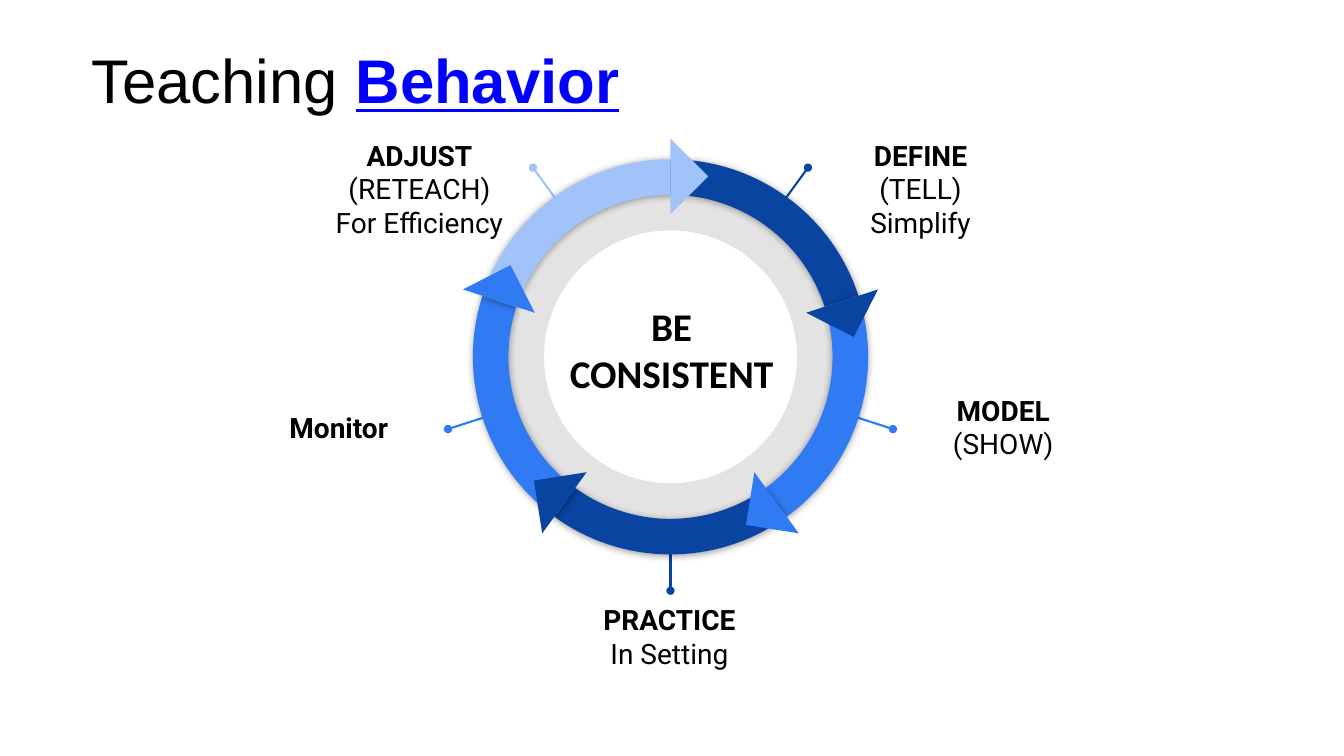
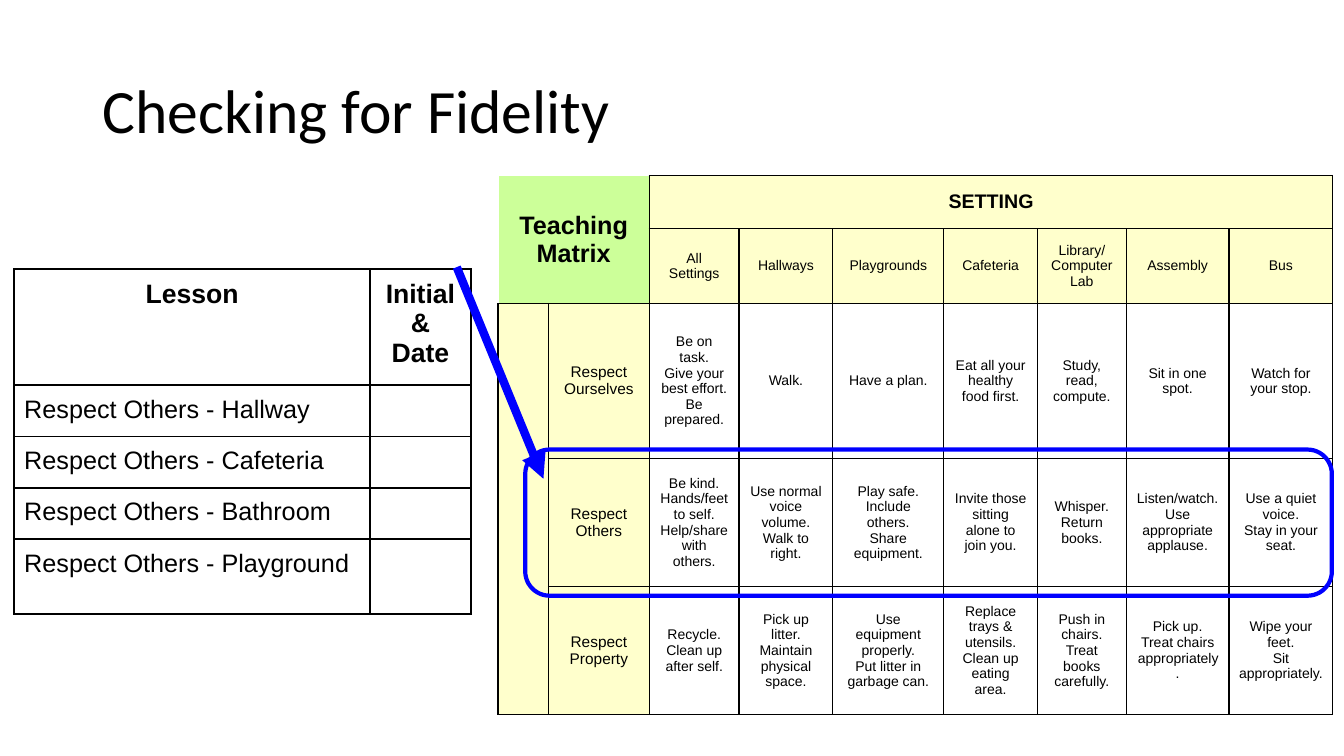
from math import cos, radians, sin

from lxml import etree
from pptx import Presentation
from pptx import util as u
from pptx.dml.color import RGBColor
from pptx.enum import shapes, text
from pptx.oxml import ns

IN, PT = u.Inches, u.Pt
BLACK = RGBColor(0, 0, 0)
WHITE = RGBColor(255, 255, 255)
NAVY = RGBColor(0x09, 0x44, 0xA1)
AZURE = RGBColor(0x30, 0x7B, 0xF3)
SKY = RGBColor(0xA1, 0xC3, 0xFA)
BLUE = RGBColor(0, 0, 255)
LIME = RGBColor(0xCC, 0xFF, 0x99)
CREAM = RGBColor(0xFF, 0xFF, 0xCC)

MID = text.MSO_ANCHOR.MIDDLE
TOP = text.MSO_ANCHOR.TOP
CENTER = text.PP_ALIGN.CENTER
LEFT = text.PP_ALIGN.LEFT
KIND = shapes.MSO_SHAPE
STEP = 72  # degrees from one stage of the ring to the next

# Ring stages, clockwise from the top: colour, label spot, label lines
STAGES = [
    (NAVY, (8.04, 1.24), ["DEFINE", "(TELL)", "Simplify"]),
    (AZURE, (8.86, 3.77), ["MODEL", "(SHOW)"]),
    (NAVY, (5.55, 5.85), ["PRACTICE", "In Setting"]),
    (AZURE, (2.27, 3.94), ["Monitor"]),
    (SKY, (3.07, 1.24), ["ADJUST", "(RETEACH)", "For Efficiency"]),
]

PLACES = ["Hallway", "Cafeteria", "Bathroom", "Playground"]

SETTINGS = ["All Settings", "Hallways", "Playgrounds", "Cafeteria",
            "Library/\nComputer Lab", "Assembly", "Bus"]
RULES = {
    "Respect Ourselves": [
        "Be on task.\nGive your best effort.\nBe prepared.", "Walk.",
        "Have a plan.", "Eat all your healthy food first.",
        "Study, read, compute.", "Sit in one spot.", "Watch for your stop."],
    "Respect Others": [
        "Be kind.\nHands/feet to self.\nHelp/share with others.",
        "Use normal voice volume.\nWalk to right.",
        "Play safe.\nInclude others.\nShare equipment.",
        "Invite those sitting alone to join you.", "Whisper.\nReturn books.",
        "Listen/watch.\nUse appropriate applause.",
        "Use a quiet voice.\nStay in your seat."],
    "Respect Property": [
        "Recycle.\nClean up after self.",
        "Pick up litter.\nMaintain physical space.",
        "Use equipment properly.\nPut litter in garbage can.",
        "Replace trays & utensils.\nClean up eating area.",
        "Push in chairs.\nTreat books carefully.",
        "Pick up.\nTreat chairs appropriately.",
        "Wipe your feet.\nSit appropriately."],
}


# Shared helpers
def style(item, **form):
    for key, val in form.items():
        setattr(item, key, val)


def node(root, tag, **atts):
    return etree.SubElement(root, ns.qn("a:" + tag), atts)


def write(frame, lines, align=LEFT, space=None, **font):
    """Fill a frame; each line is a list of (words, format) runs."""
    for i, runs in enumerate(lines):
        para = frame.paragraphs[0] if i == 0 else frame.add_paragraph()
        style(para, alignment=align, line_spacing=space)
        for words, form in runs:
            run = para.add_run()
            run.text = words
            form = {"color": BLACK, **font, **form}
            run.font.color.rgb = form.pop("color")
            style(run.font, **form)


def label(slide, box, lines, pad=(0.13, 0.13), anchor=TOP, **form):
    frame = slide.shapes.add_textbox(*map(IN, box)).text_frame
    style(frame, word_wrap=True, vertical_anchor=anchor,
          margin_left=IN(pad[0]), margin_right=IN(pad[0]),
          margin_top=IN(pad[1]), margin_bottom=IN(pad[1]))
    write(frame, lines, **form)


def title(slide, box, runs, face):
    label(slide, box, [runs], pad=(0.1, 0.05), anchor=MID,
          space=0.9, size=PT(44), name=face)


def solid(slide, kind, box, color):
    shape = slide.shapes.add_shape(kind, *map(IN, box))
    shape.shadow.inherit = False
    shape.fill.solid()
    shape.fill.fore_color.rgb = color
    shape.line.fill.background()
    return shape


def line(slide, start, end, color, width, mark, kind):
    link = slide.shapes.add_connector(
        shapes.MSO_CONNECTOR.STRAIGHT, *map(IN, (*start, *end)))
    link.line.color.rgb = color
    link.line.width = PT(width)
    node(link.line._get_or_add_ln(), mark, type=kind)
    node(link._element.spPr, "effectLst")


def polar(hub, reach, turn):
    """Point at a clockwise turn from twelve o'clock."""
    a = radians(turn)
    return hub[0] + reach * sin(a), hub[1] - reach * cos(a)


def around(spot, size):
    return spot[0] - size / 2, spot[1] - size / 2, size, size


# Ring of five arrows
def track(slide, hub):
    shape = solid(slide, KIND.DONUT, around(hub, 3.7), BLACK)
    shape.adjustments[0] = 0.161
    tint = shape._element.spPr.find(".//" + ns.qn("a:srgbClr"))
    node(tint, "alpha", val="11000")


def arc(slide, hub, turn, color):
    shape = solid(slide, KIND.BLOCK_ARC, around(hub, 3.92), color)
    # Angles are in 60000ths of a degree, adjustments in 100000ths
    ends = [(270 + turn + more) % 360 * 0.6 for more in (0, STEP)]
    for i, val in enumerate([*ends, 0.09]):
        shape.adjustments[i] = val
    cast = node(shape._element.spPr.find(ns.qn("a:effectLst")), "outerShdw",
                blurRad=str(PT(5.6)), dist=str(PT(0.8)), dir="5400000",
                algn="ctr", rotWithShape="0")
    node(node(cast, "srgbClr", val="000000"), "alpha", val="40000")


def head(slide, hub, turn, color):
    box = around(polar(hub, 1.79, turn), 0.53)
    shape = solid(slide, KIND.RIGHT_TRIANGLE, box, color)
    shape.rotation = (225 + turn) % 360


def ring(slide, hub):
    track(slide, hub)
    for i, (color, spot, lines) in enumerate(STAGES):
        turn = STEP * (i + 0.5)
        line(slide, polar(hub, 2.32, turn), polar(hub, 1.62, turn),
             color, 1.5, "headEnd", "oval")
        label(slide, (*spot, 2.18, 0.98),
              [[(words, {"bold": n == 0})] for n, words in enumerate(lines)],
              align=CENTER, size=PT(20), name="Roboto")
    for draw, lag in ((arc, 0), (head, 1)):
        for i, (color, *_) in enumerate(STAGES):
            draw(slide, hub, STEP * (i + lag), color)
    label(slide, (hub[0] - 1.2, hub[1] - 0.66, 2.42, 1.17),
          [[("BE", {})], [("CONSISTENT", {})]], anchor=MID, align=CENTER,
          size=PT(28), name="Calibri", bold=True)


# Tables
def grid(slide, spot, cols, rows):
    frame = slide.shapes.add_table(
        len(rows), len(cols), *map(IN, (*spot, sum(cols), sum(rows))))
    table = frame.table
    style(table, first_row=False, horz_banding=False)
    for col, size in zip(table.columns, cols):
        col.width = IN(size)
    for row, size in zip(table.rows, rows):
        row.height = IN(size)
    return table


def cell(table, at, words, size, color=None, pad=0.05, anchor=MID,
         align=CENTER, bold=False, edge=1, sides="LRTB"):
    box = table.cell(*at)
    style(box, vertical_anchor=anchor, margin_left=IN(0.1),
          margin_right=IN(0.1), margin_top=IN(pad), margin_bottom=IN(pad))
    if color is None:
        box.fill.background()
    else:
        box.fill.solid()
        box.fill.fore_color.rgb = color
    if words:
        write(box.text_frame, [[(part, {})] for part in words.split("\n")],
              align, size=PT(size), name="Arial", bold=bold)
    props = box._tc.get_or_add_tcPr()
    for i, side in enumerate(sides):
        rule = node(props, "ln" + side, w=str(PT(edge)))
        node(node(rule, "solidFill"), "srgbClr", val=str(BLACK))
        props.insert(i, rule)


def lessons(slide, spot):
    table = grid(slide, spot, [3.53, 1], [1.1, 0.51, 0.51, 0.51, 0.74])
    form = {"pad": 0.1, "anchor": TOP, "edge": 1.5}
    for c, words in enumerate(["Lesson", "Initial & Date"]):
        cell(table, (0, c), words, 19, bold=True, **form)
    for r, place in enumerate(PLACES, 1):
        for c, words in enumerate([f"Respect Others - {place}", ""]):
            cell(table, (r, c), words, 18, align=LEFT, **form)


def matrix(slide, spot):
    table = grid(slide, spot,
                 [0.5, 1, 0.89, 0.93, 1.1, 0.93, 0.88, 1.02, 1.03],
                 [0.53, 0.74, 1.54, 1.27, 1.27])
    for start, end in (((0, 0), (1, 1)), ((0, 2), (0, 8)), ((2, 0), (4, 0))):
        table.cell(*start).merge(table.cell(*end))
    # Heading cells
    cell(table, (0, 0), "Teaching Matrix", 18, LIME, bold=True, sides="RB")
    cell(table, (0, 2), "SETTING", 14, CREAM, bold=True)
    cell(table, (2, 0), "", 11, CREAM)
    for c, words in enumerate(SETTINGS, 2):
        cell(table, (1, c), words, 10, CREAM)
    # One row of expectations for each rule
    for r, (rule, deeds) in enumerate(RULES.items(), 2):
        cell(table, (r, 1), rule, 11, CREAM)
        for c, words in enumerate(deeds, 2):
            cell(table, (r, c), words, 10, WHITE)


def callout(slide, box):
    shape = solid(slide, KIND.ROUNDED_RECTANGLE, box, WHITE)
    shape.fill.background()
    shape.line.color.rgb = BLUE
    shape.line.width = PT(3)
    x, y = box[:2]
    line(slide, (x - 0.68, y - 1.81), (x + 0.18, y + 0.29),
         BLUE, 6, "tailEnd", "triangle")


# Slides
def cycle(slide):
    ring(slide, (6.65, 3.54))
    title(slide, (0.81, 0.33, 10.19, 1),
          [("Teaching ", {}),
           ("Behavior", {"color": BLUE, "bold": True, "underline": True})],
          "Arial")


def check(slide):
    title(slide, (0.92, 0.4, 11.5, 1.45),
          [("Checking for Fidelity", {})], "Calibri")
    lessons(slide, (0.14, 2.67))
    matrix(slide, (4.94, 1.74))
    callout(slide, (5.21, 4.46, 8, 1.45))


def main():
    deck = Presentation()
    style(deck, slide_width=IN(13.33), slide_height=IN(7.5))
    for build in (cycle, check):
        build(deck.slides.add_slide(deck.slide_layouts[6]))
    deck.save("out.pptx")


if __name__ == "__main__":
    main()
